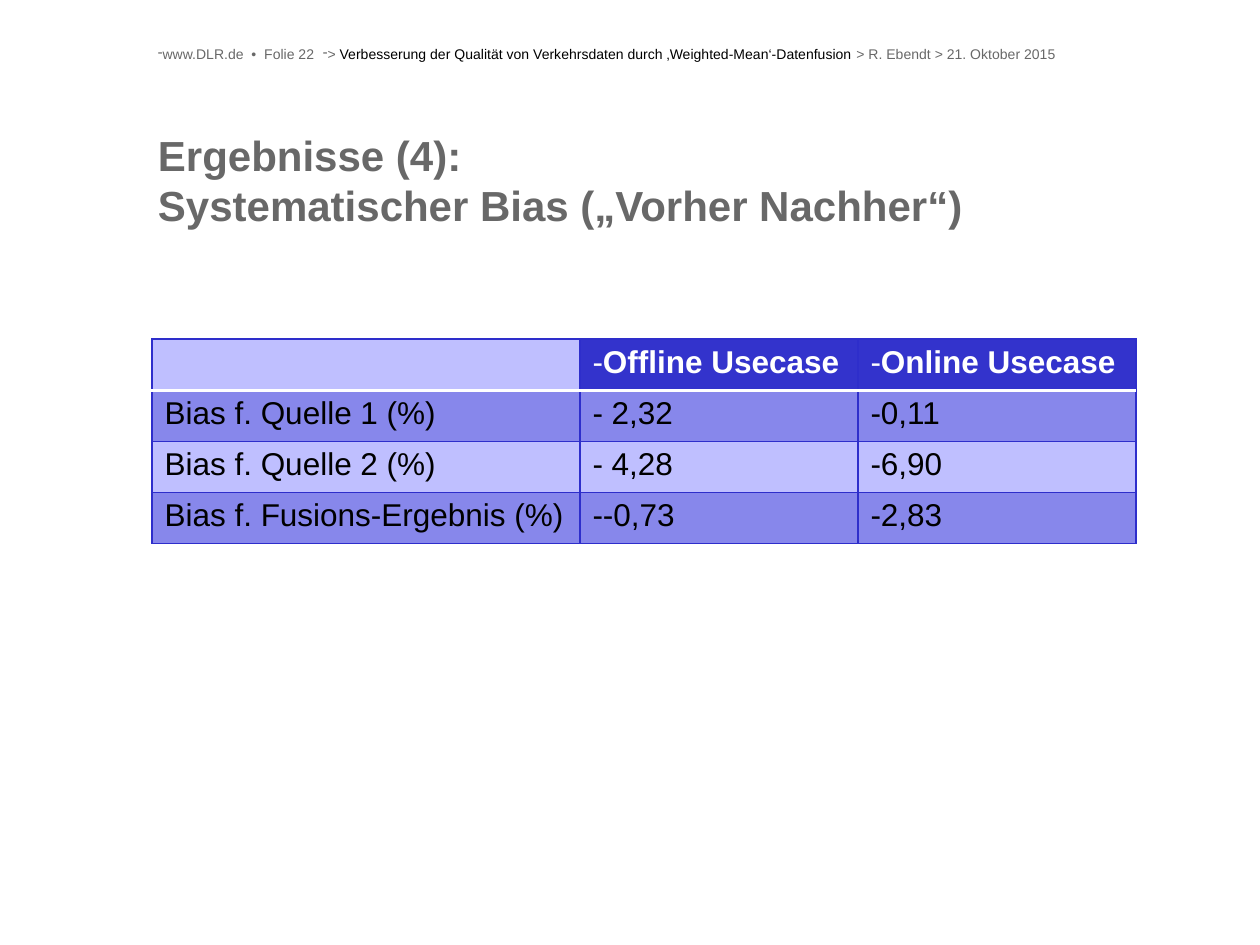
from dataclasses import dataclass

from lxml.etree import SubElement
from pptx import Presentation
from pptx.dml.color import RGBColor
from pptx.enum.text import MSO_ANCHOR, PP_ALIGN
from pptx.oxml.ns import qn
from pptx.util import Emu, Pt

PX_PER_INCH = 126


@dataclass(frozen=True)
class Theme:
    font: str = "Arial"
    grey: str = "686868"
    black: str = "000000"
    white: str = "FFFFFF"
    header_fill: str = "3333CC"
    dark_band: str = "8787EB"
    light_band: str = "BFBFFF"
    border: str = "2E2ECB"
    title_size: float = 24
    table_size: float = 18
    header_size: float = 8


THEME = Theme()


def px(length):
    return Emu(round(length * 914400 / PX_PER_INCH))


def place(shape, box):
    shape.left, shape.top, shape.width, shape.height = map(px, box)


def write(frame, runs, size, bold=False, bullet=False, bullet_font=None,
          line_spacing=None):
    """Fill the first paragraph with (text, colour) runs; a newline is a line break."""
    paragraph = frame.paragraphs[0]
    paragraph.alignment = PP_ALIGN.LEFT
    if bullet:
        properties = paragraph._p.get_or_add_pPr()
        properties.set("marL", "0")
        properties.set("indent", "0")
        if bullet_font:
            SubElement(properties, qn("a:buFont"), typeface=bullet_font)
        SubElement(properties, qn("a:buChar"), char="-")
    if line_spacing:
        paragraph.line_spacing = Pt(line_spacing)
    for text, colour in runs:
        for index, line in enumerate(text.split("\n")):
            if index:
                paragraph.add_line_break()
            run = paragraph.add_run()
            run.text = line
            run.font.name = THEME.font
            run.font.size = Pt(size)
            run.font.bold = bold
            run.font.color.rgb = RGBColor.from_string(colour)


def remove_margins(frame):
    frame.margin_left = frame.margin_top = frame.margin_right = frame.margin_bottom = 0


def add_header(slide, box):
    left, top, width, height = box
    folio_width = 165
    parts = [
        (left, folio_width, [("www.DLR.de  •  Folie 22", THEME.grey)]),
        (left + folio_width, width - folio_width, [
            ("> ", THEME.grey),
            ("Verbesserung der Qualität von Verkehrsdaten durch "
             "‚Weighted-Mean‘-Datenfusion", THEME.black),
            (" > R. Ebendt > 21. Oktober 2015", THEME.grey),
        ]),
    ]
    for part_left, part_width, runs in parts:
        shape = slide.shapes.add_textbox(*map(px, (part_left, top, part_width, height)))
        frame = shape.text_frame
        frame.word_wrap = True
        remove_margins(frame)
        write(frame, runs, THEME.header_size, bullet=True, line_spacing=26)


def add_title(slide, box):
    title = slide.shapes.title
    place(title, box)
    frame = title.text_frame
    remove_margins(frame)
    frame.vertical_anchor = MSO_ANCHOR.MIDDLE
    text = "Ergebnisse (4):\nSystematischer Bias („Vorher Nachher“)"
    write(frame, [(text, THEME.grey)], THEME.title_size, bold=True, line_spacing=28.5)


def set_borders(cell, **sides):
    """Draw borders given as side=(colour, points); call before filling the cell."""
    properties = cell._tc.get_or_add_tcPr()
    for side in ("L", "R", "T", "B"):
        colour, points = sides[side]
        line = SubElement(properties, qn(f"a:ln{side}"), w=str(Pt(points)))
        fill = SubElement(line, qn("a:solidFill"))
        SubElement(fill, qn("a:srgbClr"), val=colour)


def add_bias_table(slide, box):
    rows = [
        ("", "Offline Usecase", "Online Usecase"),
        ("Bias f. Quelle 1 (%)", " 2,32", "0,11"),
        ("Bias f. Quelle 2 (%)", " 4,28", "6,90"),
        ("Bias f. Fusions-Ergebnis (%)", "-0,73", "2,83"),
    ]
    widths = (428, 278, 278)
    thin, thick = (THEME.border, 0.75), (THEME.white, 2)
    table = slide.shapes.add_table(len(rows), len(widths), *map(px, box)).table
    table.first_row = table.horz_banding = False
    for column, width in zip(table.columns, widths):
        column.width = px(width)
    for row_index, texts in enumerate(rows):
        table.rows[row_index].height = px(box[3] // len(rows))
        is_header = row_index == 0
        for column_index, text in enumerate(texts):
            cell = table.cell(row_index, column_index)
            set_borders(cell, L=thin, R=thin,
                        T=thick if row_index == 1 else thin,
                        B=thick if is_header else thin)
            if is_header and text:
                fill = THEME.header_fill
            else:
                fill = THEME.dark_band if row_index % 2 else THEME.light_band
            cell.fill.solid()
            cell.fill.fore_color.rgb = RGBColor.from_string(fill)
            if text:
                colour = THEME.white if is_header else THEME.black
                write(cell.text_frame, [(text, colour)], THEME.table_size,
                      bold=is_header, bullet=column_index > 0,
                      bullet_font=THEME.font)


def main():
    presentation = Presentation()
    presentation.slide_width, presentation.slide_height = px(1260), px(945)
    slide = presentation.slides.add_slide(presentation.slide_layouts[5])
    add_title(slide, (158, 129, 1012, 102))
    add_bias_table(slide, (152, 339, 984, 204))
    add_header(slide, (158, 17, 908, 16))
    presentation.save("out.pptx")


if __name__ == "__main__":
    main()
